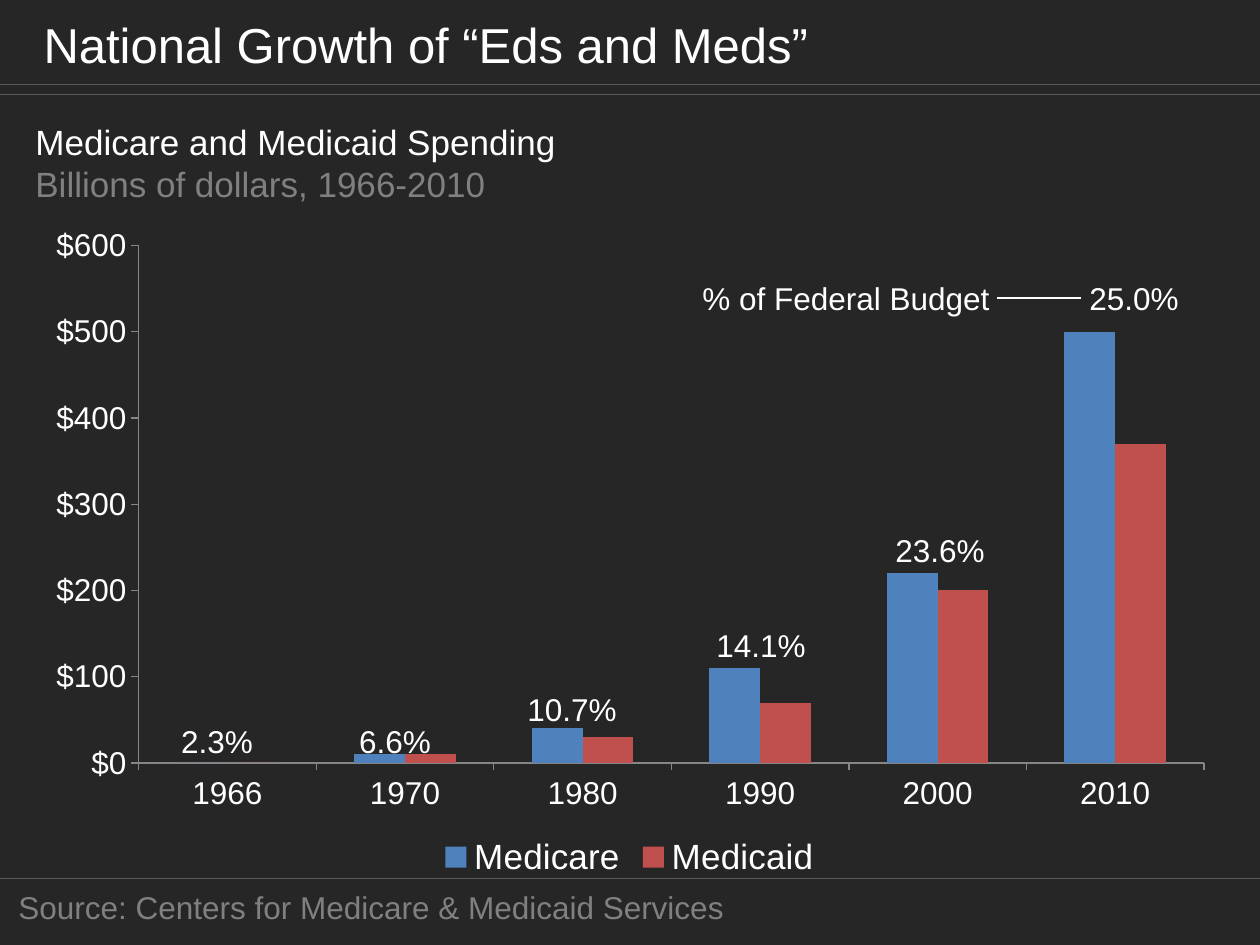
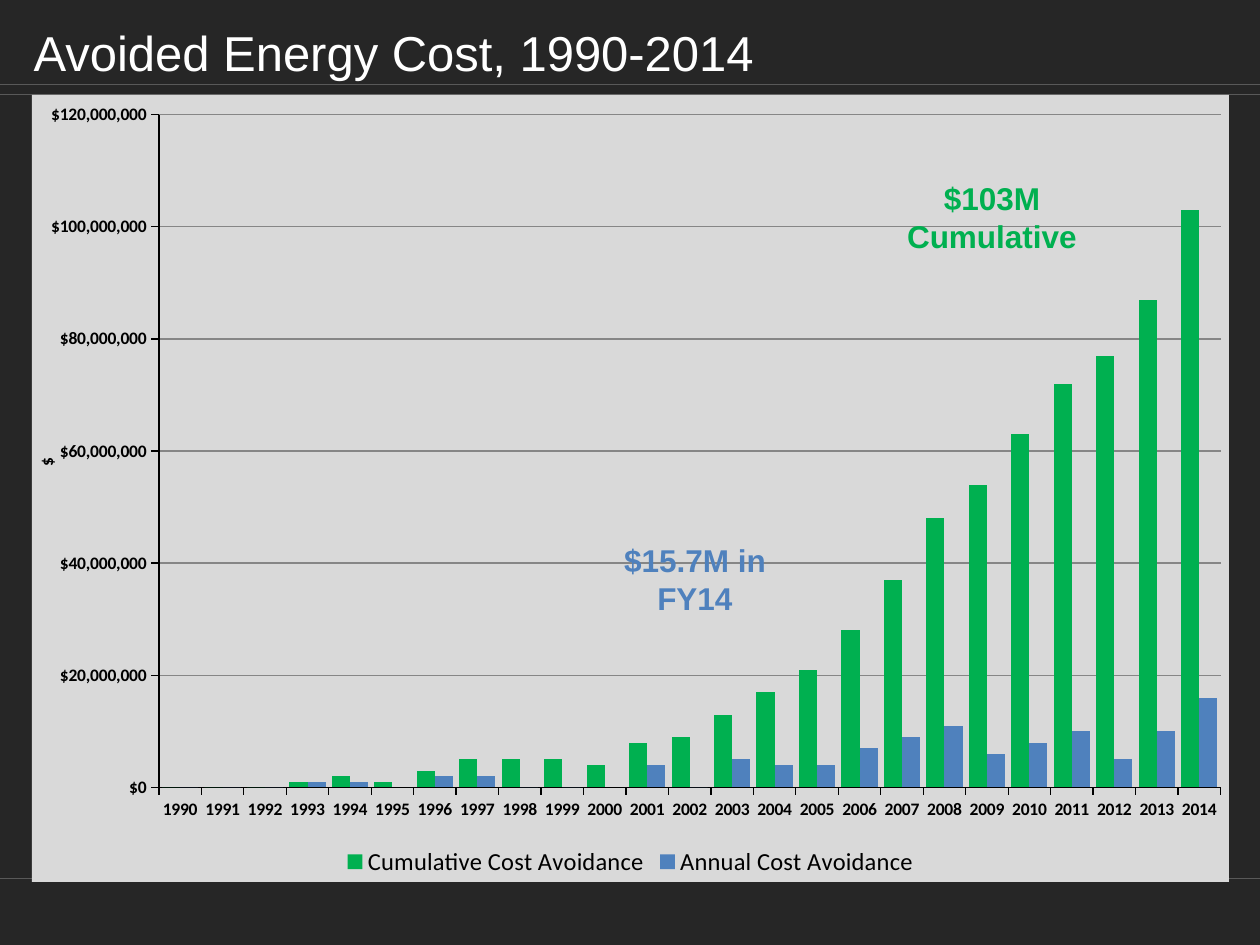
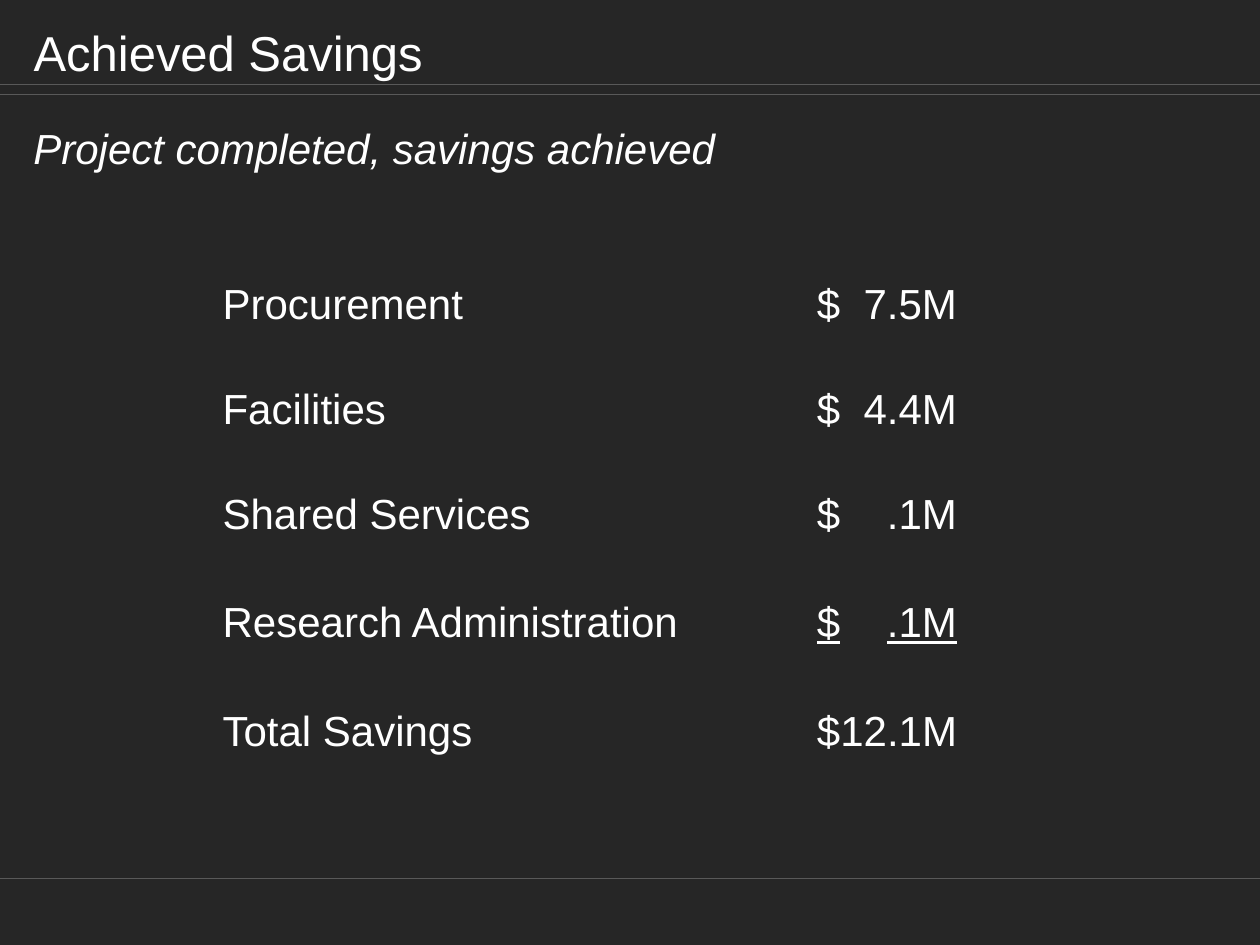
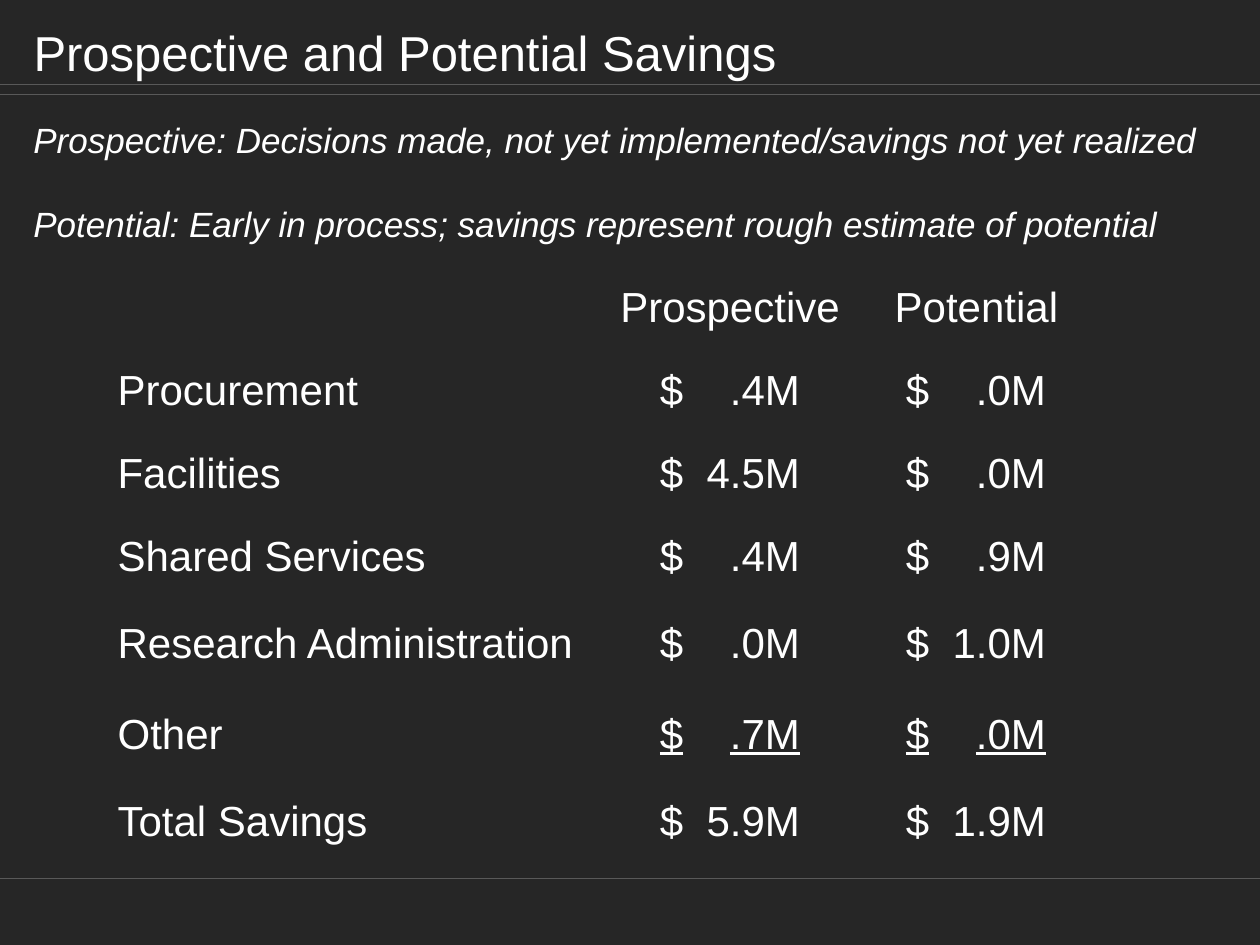
from lxml import etree
from pptx import Presentation
from pptx.chart.data import CategoryChartData
from pptx.dml.color import RGBColor
from pptx.enum.chart import XL_CHART_TYPE, XL_LEGEND_POSITION
from pptx.enum.shapes import MSO_CONNECTOR
from pptx.enum.text import MSO_ANCHOR, PP_ALIGN
from pptx.oxml import parse_xml
from pptx.oxml.ns import nsdecls, qn
from pptx.util import Pt

LEFT, CENTER, RIGHT = PP_ALIGN.LEFT, PP_ALIGN.CENTER, PP_ALIGN.RIGHT
TOP, MIDDLE = MSO_ANCHOR.TOP, MSO_ANCHOR.MIDDLE
COLUMNS = XL_CHART_TYPE.COLUMN_CLUSTERED
LEGEND_BOTTOM = XL_LEGEND_POSITION.BOTTOM
STRAIGHT = MSO_CONNECTOR.STRAIGHT

WIDTH, HEIGHT = 1260, 945
EMU_PER_PX = 914400 / 126
DARK, WHITE, GRAY, RULE = "262626", "FFFFFF", "808080", "595959"
BLACK, AXIS, PANEL = "000000", "868686", "D9D9D9"
BLUE, RED, GREEN = "4F81BD", "C0504D", "00B050"
NO_TABLE_STYLE = "{2D5ABB26-0587-4C30-8999-92F81FD0307C}"
RULE_TOPS = [84, 94, 878]
TITLE_AREA = (21, 10, 1229, 84)
MONEY_WIDTH = 140
MILLION = 1000000

SPENDING = {
    "title": "National Growth of “Eds and Meds”",
    "title_area": (31, 8, 799, 72),
    "heading": ["Medicare and Medicaid Spending", "Billions of dollars, 1966-2010"],
    "source": "Source: Centers for Medicare & Medicaid Services",
    "years": [1966, 1970, 1980, 1990, 2000, 2010],
    "series": [
        ("Medicare", BLUE, [0, 10, 40, 110, 220, 500]),
        ("Medicaid", RED, [0, 10, 30, 70, 200, 370]),
    ],
    "shares": [
        ("2.3%", 217, 716), ("6.6%", 395, 716), ("10.7%", 572, 684),
        ("14.1%", 761, 620), ("23.6%", 940, 525), ("25.0%", 1134, 273),
    ],
    "share_note": "% of Federal Budget",
}

ENERGY = {
    "title": "Avoided Energy Cost, 1990-2014",
    "years": list(range(1990, 2015)),
    "series": [
        ("Cumulative Cost Avoidance", GREEN,
         [0, 0, 0, 1, 2, 1, 3, 5, 5, 5, 4, 8, 9, 13, 17, 21, 28, 37, 48, 54, 63, 72, 77, 87, 103]),
        ("Annual Cost Avoidance", BLUE,
         [0, 0, 0, 1, 1, -1, 2, 2, 0, 0, -1, 4, 0, 5, 4, 4, 7, 9, 11, 6, 8, 10, 5, 10, 16]),
    ],
    "callouts": [
        (["$103M", "Cumulative"], GREEN, 878, 173),
        (["$15.7M in FY14"], BLUE, 581, 535),
    ],
}

ACHIEVED = {
    "title": "Achieved Savings",
    "notes": ["Project completed, savings achieved"],
    "notes_area": (21, 116, 801, 63),
    "notes_size": 24,
    "origin": (210, 252),
    "columns": [525, 305],
    "heights": [105, 105, 105, 113, 105],
    "rows": [
        ("Procurement", "7.5M"),
        ("Facilities", "4.4M"),
        ("Shared Services", ".1M"),
        ("Research Administration", ".1M"),
        ("Total Savings", "12.1M"),
    ],
}

PROSPECTIVE = {
    "title": "Prospective and Potential Savings",
    "notes": [
        "Prospective: Decisions made, not yet implemented/savings not yet realized",
        "Potential: Early in process; savings represent rough estimate of potential",
    ],
    "notes_area": (21, 112, 1239, 140),
    "notes_size": 20,
    "origin": (105, 266),
    "columns": [494, 262, 231],
    "heights": [83, 83, 83, 83, 91, 91, 83],
    "header": ("", "Prospective", "Potential"),
    "rows": [
        ("Procurement", ".4M", ".0M"),
        ("Facilities", "4.5M", ".0M"),
        ("Shared Services", ".4M", ".9M"),
        ("Research Administration", ".0M", "1.0M"),
        ("Other", ".7M", ".0M"),
        ("Total Savings", "5.9M", "1.9M"),
    ],
}


def px(length):
    return round(length * EMU_PER_PX)


def color(value):
    return RGBColor.from_string(value)


def style_font(font, size, hue, name="Arial", bold=False, italic=False, underline=False):
    font.name, font.size, font.color.rgb = name, Pt(size), color(hue)
    font.bold, font.italic, font.underline = bold, italic, underline


def write(frame, lines, size=18, hue=WHITE, align=LEFT, gap=0, **style):
    for index, line in enumerate(lines):
        para = frame.paragraphs[0] if index == 0 else frame.add_paragraph()
        para.alignment = align
        if index and gap:
            para.space_before = Pt(gap)
        span = para.add_run()
        span.text = line
        style_font(span.font, size, hue, **style)


def add_text(page, area, lines, anchor=TOP, wrap=True, **style):
    box = page.shapes.add_textbox(*map(px, area))
    box.text_frame.word_wrap = wrap
    box.text_frame.vertical_anchor = anchor
    write(box.text_frame, lines, **style)
    return box


def add_line(page, start, end, hue, weight):
    line = page.shapes.add_connector(STRAIGHT, *map(px, start + end))
    line.line.color.rgb = color(hue)
    line.line.width = Pt(weight)
    etree.SubElement(line.element.spPr, qn("a:effectLst"))
    return line


def add_page(deck, title, area=TITLE_AREA):
    page = deck.slides.add_slide(deck.slide_layouts[5])
    box = page.shapes.title
    box.left, box.top, box.width, box.height = map(px, area)
    box.text_frame.vertical_anchor = MIDDLE
    write(box.text_frame, [title], size=28)
    return page


def style_master(deck, page):
    master = deck.slide_master
    master.background.fill.solid()
    master.background.fill.fore_color.rgb = color(DARK)
    for top in RULE_TOPS:
        line = add_line(page, (0, top), (WIDTH, top), RULE, 0.25)
        master.element.cSld.spTree.append(line.element)


def add_columns(page, area, years, series, plot, gap, top, step, hue, axis_hue,
                axis_font, legend_size):
    data = CategoryChartData()
    data.categories = years
    for name, _, values in series:
        data.add_series(name, values)
    chart = page.shapes.add_chart(COLUMNS, *map(px, area), data).chart
    style_font(chart.font, 15, hue, axis_font["name"])
    chart.has_title = False
    chart.has_legend = True
    chart.legend.position = LEGEND_BOTTOM
    chart.legend.include_in_layout = False
    style_font(chart.legend.font, legend_size, hue, axis_font["name"])
    columns = chart.plots[0]
    columns.gap_width = gap
    columns.vary_by_categories = False
    for bars, (_, fill, _) in zip(columns.series, series):
        bars.invert_if_negative = False
        bars.format.fill.solid()
        bars.format.fill.fore_color.rgb = color(fill)
    for axis in (chart.category_axis, chart.value_axis):
        axis.has_major_gridlines = False
        axis.format.line.color.rgb = color(axis_hue)
        axis.format.line.width = Pt(0.75)
        style_font(axis.tick_labels.font, hue=hue, **axis_font)
    scale = chart.value_axis
    scale.minimum_scale, scale.maximum_scale, scale.major_unit = 0, top, step
    scale.tick_labels.number_format = '"$"#,##0'
    scale.tick_labels.number_format_is_linked = False
    place_plot(chart, plot)
    return chart


def place_plot(chart, plot):
    area = chart.element.find(".//" + qn("c:plotArea"))
    for layout in area.findall(qn("c:layout")):
        area.remove(layout)
    layout = etree.Element(qn("c:layout"))
    manual = etree.SubElement(layout, qn("c:manualLayout"))
    settings = [("layoutTarget", "inner"), ("xMode", "edge"), ("yMode", "edge")]
    for tag, value in settings + list(zip("xywh", plot)):
        etree.SubElement(manual, qn("c:" + tag), val=str(value))
    area.insert(0, layout)


def fill_chart(chart, hue):
    chart.element.find(qn("c:chart")).addnext(parse_xml(
        f'<c:spPr {nsdecls("c", "a")}><a:solidFill><a:srgbClr val="{hue}"/></a:solidFill>'
        '<a:ln><a:noFill/></a:ln></c:spPr>'))


def write_money(cell, amount, column_width, underline):
    cell.margin_left, cell.margin_right = px((column_width - MONEY_WIDTH) // 2), 0
    para = cell.text_frame.paragraphs[0]
    tabs = etree.SubElement(para._p.get_or_add_pPr(), qn("a:tabLst"))
    etree.SubElement(tabs, qn("a:tab"), pos=str(px(MONEY_WIDTH)), algn="r")
    mark = "$" if len(amount) > 4 else "$\t"
    write(cell.text_frame, [mark + amount], size=24, underline=underline)


def add_savings(deck, content):
    page = add_page(deck, content["title"])
    columns, heights = content["columns"], content["heights"]
    header = [content["header"]] if "header" in content else []
    rows = header + content["rows"]
    frame = page.shapes.add_table(
        len(rows), len(columns),
        *map(px, content["origin"] + (sum(columns), sum(heights))))
    table = frame.table
    table.first_row = table.horz_banding = False
    frame.element.find(".//" + qn("a:tableStyleId")).text = NO_TABLE_STYLE
    for column, width in zip(table.columns, columns):
        column.width = px(width)
    for index, (row, values) in enumerate(zip(table.rows, rows)):
        row.height = px(heights[index])
        for place, (cell, value) in enumerate(zip(row.cells, values)):
            cell.fill.background()
            cell.vertical_anchor = MIDDLE
            if place and values not in header:
                write_money(cell, value, columns[place], index == len(rows) - 2)
            elif value:
                write(cell.text_frame, [value], size=24, align=CENTER if place else LEFT)
    add_text(page, content["notes_area"], content["notes"],
             size=content["notes_size"], italic=True, gap=24)


def add_spending(deck):
    page = add_page(deck, SPENDING["title"], SPENDING["title_area"])
    style_master(deck, page)
    add_columns(page, (31, 212, 1197, 672), SPENDING["years"], SPENDING["series"],
                plot=(0.09, 0.05, 0.89, 0.77), gap=150, top=600, step=100,
                hue=WHITE, axis_hue=AXIS, axis_font={"name": "Arial", "size": 18},
                legend_size=20)
    add_text(page, (6, 882, 765, 50), [SPENDING["source"]], hue=GRAY)
    for share, center, top in SPENDING["shares"]:
        add_text(page, (center - 58, top, 116, 50), [share], wrap=False, align=CENTER)
    heading = add_text(page, (23, 105, 1134, 116), SPENDING["heading"], anchor=MIDDLE, size=20)
    heading.text_frame.paragraphs[1].runs[0].font.color.rgb = color(GRAY)
    add_line(page, (1081, 298), (997, 298), WHITE, 0.75)
    add_text(page, (687, 273, 315, 50), [SPENDING["share_note"]], wrap=False, align=RIGHT)


def add_energy(deck):
    page = add_page(deck, ENERGY["title"])
    series = [(name, hue, [value * MILLION for value in values])
              for name, hue, values in ENERGY["series"]]
    chart = add_columns(page, (32, 95, 1197, 787), ENERGY["years"], series,
                        plot=(0.106, 0.025, 0.887, 0.855), gap=35,
                        top=120 * MILLION, step=20 * MILLION, hue=BLACK, axis_hue=BLACK,
                        axis_font={"name": "Calibri", "size": 10, "bold": True},
                        legend_size=14)
    fill_chart(chart, PANEL)
    scale = chart.value_axis
    scale.has_major_gridlines = True
    scale.major_gridlines.format.line.color.rgb = color(AXIS)
    scale.major_gridlines.format.line.width = Pt(0.75)
    write(scale.axis_title.text_frame, ["$"], size=10, hue=BLACK, name="Calibri",
          bold=True, align=CENTER)
    for lines, hue, left, top in ENERGY["callouts"]:
        add_text(page, (left, top, 228, 53), lines, hue=hue, bold=True, align=CENTER)


def main():
    deck = Presentation()
    deck.slide_width, deck.slide_height = px(WIDTH), px(HEIGHT)
    add_spending(deck)
    add_energy(deck)
    add_savings(deck, ACHIEVED)
    add_savings(deck, PROSPECTIVE)
    deck.save("out.pptx")


if __name__ == "__main__":
    main()
